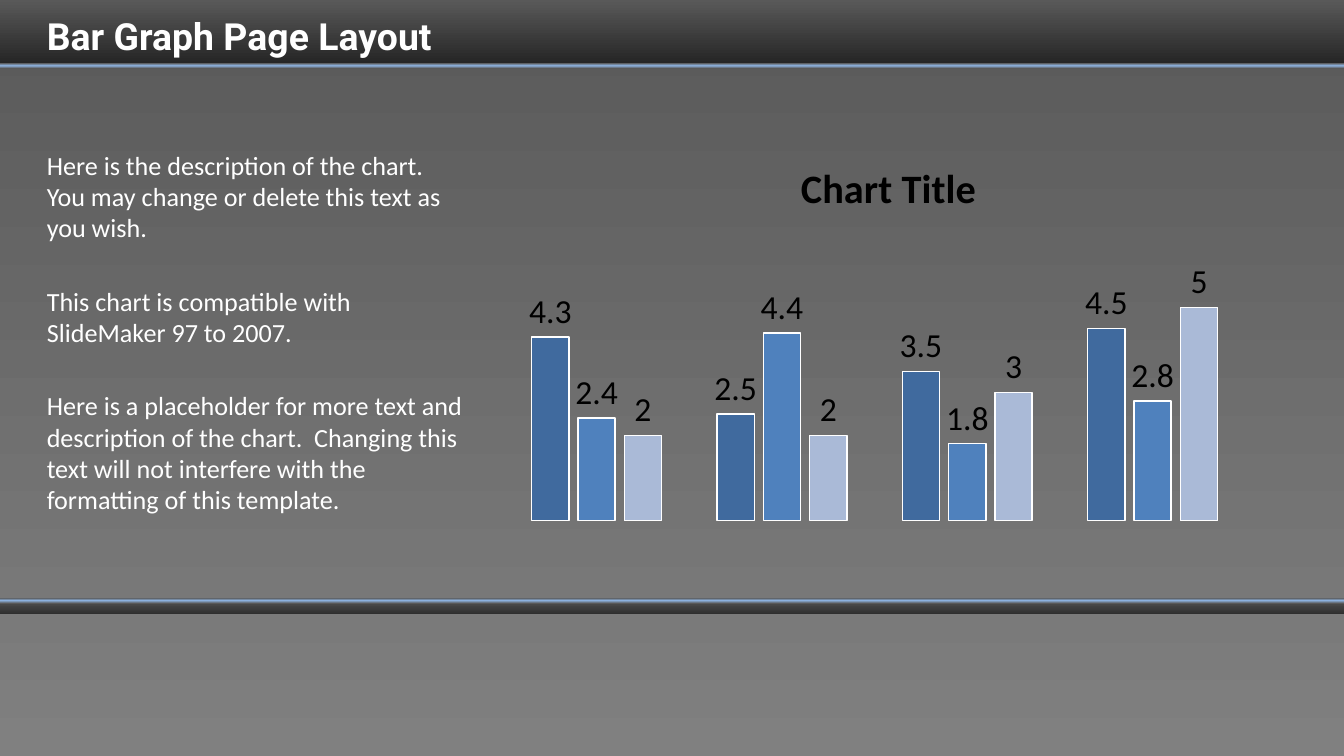
from dataclasses import dataclass

import pptx
import pptx.chart.data
import pptx.dml.color
import pptx.enum.chart
import pptx.enum.text
import pptx.oxml
import pptx.oxml.ns
import pptx.util
from pptx.enum.shapes import MSO_SHAPE

# The slide is a grid of 100 columns by 56.25 rows of square cells
CELL = 0.1
COLUMNS, ROWS = 100, 56.25

COLORS = {
    "dark": "262626",
    "charcoal": "2E2E2E",
    "gray": "595959",
    "light gray": "808080",
    "glow": "8EB4E3",
    "white": "FFFFFF",
    "black": "000000",
    "deep blue": "406A9E",
    "blue": "4F81BD",
    "pale blue": "AABAD7",
}
GLOW_STOPS = ((3, "gray"), (49, "glow"), (100, "gray"))


@dataclass(frozen=True)
class Area:
    column: float
    row: float
    columns: float
    rows: float

    def lengths(self) -> list:
        cells = (self.column, self.row, self.columns, self.rows)
        return [cell_length(count) for count in cells]


@dataclass(frozen=True)
class Band:
    area: Area
    stops: tuple


@dataclass(frozen=True)
class Series:
    name: str
    values: tuple
    color: str


@dataclass(frozen=True)
class TextStyle:
    font: str
    size: float
    bold: bool = False
    gap: float = 0
    anchor: object = pptx.enum.text.MSO_ANCHOR.TOP


BANDS = (
    Band(Area(0, 44.5, COLUMNS, 1.2), ((0, "gray"), (100, "charcoal"))),
    Band(Area(0, 0, COLUMNS, 4.7), ((0, "gray"), (100, "dark"))),
    Band(Area(-1.9, 4.7, 102.5, 0.4), GLOW_STOPS),
    Band(Area(-1.2, 44.5, 102.5, 0.4), GLOW_STOPS),
)
SERIES = (
    Series("Series 1", (4.3, 2.5, 3.5, 4.5), "deep blue"),
    Series("Series 2", (2.4, 4.4, 1.8, 2.8), "blue"),
    Series("Series 3", (2, 2, 3, 5), "pale blue"),
)
DESCRIPTION = (
    "Here is the description of the chart.  You may change or delete this text as you wish.",
    "This chart is compatible with SlideMaker 97 to 2007.",
    "Here is a placeholder for more text and description of the chart.  "
    "Changing this text will not interfere with the formatting of this template.",
)


def cell_length(count: float) -> pptx.util.Length:
    return pptx.util.Inches(count * CELL)


def color(name: str) -> pptx.dml.color.RGBColor:
    return pptx.dml.color.RGBColor.from_string(COLORS[name])


def paint_gradient(fill, owner, stops: tuple) -> None:
    """Fill from top to bottom with (percent, color name) stops."""
    fill.gradient()
    fill.gradient_angle = 270
    stop_list = owner.find(".//" + pptx.oxml.ns.qn("a:gsLst"))
    for stop in list(stop_list):
        stop_list.remove(stop)
    for percent, name in stops:
        stop_list.append(pptx.oxml.parse_xml(
            f'<a:gs {pptx.oxml.ns.nsdecls("a")} pos="{percent * 1000}">'
            f'<a:srgbClr val="{COLORS[name]}"/></a:gs>'))


def draw_band(page, band: Band) -> None:
    shape = page.shapes.add_shape(MSO_SHAPE.RECTANGLE, *band.area.lengths())
    shape.shadow.inherit = False
    shape.line.fill.background()
    paint_gradient(shape.fill, shape._element, band.stops)


def draw_text(page, area: Area, texts: tuple, style: TextStyle) -> None:
    frame = page.shapes.add_textbox(*area.lengths()).text_frame
    frame.word_wrap = True
    frame.vertical_anchor = style.anchor
    for index, text in enumerate(texts):
        para = frame.add_paragraph() if index else frame.paragraphs[0]
        para.text = text
        if index:
            para.space_before = pptx.util.Pt(style.gap)
        para.font.name = style.font
        para.font.size = pptx.util.Pt(style.size)
        para.font.bold = style.bold
        para.font.color.rgb = color("white")


def place_part(part, position: int, target: str = "", **shares: float) -> None:
    """Lay out a chart part by shares of the chart: x, y and perhaps w, h."""
    for layout in part.findall(pptx.oxml.ns.qn("c:layout")):
        part.remove(layout)
    target_tag = f'<c:layoutTarget val="{target}"/>' if target else ""
    share_tags = "".join(f'<c:{tag} val="{share}"/>' for tag, share in shares.items())
    part.insert(position, pptx.oxml.parse_xml(
        f'<c:layout {pptx.oxml.ns.nsdecls("c")}><c:manualLayout>{target_tag}'
        '<c:xMode val="edge"/><c:yMode val="edge"/>'
        f'{share_tags}</c:manualLayout></c:layout>'))


def draw_chart(page, area: Area) -> None:
    data = pptx.chart.data.CategoryChartData()
    data.categories = ["1", "2", "3", "4"]
    for series in SERIES:
        data.add_series(series.name, series.values)
    chart = page.shapes.add_chart(
        pptx.enum.chart.XL_CHART_TYPE.COLUMN_CLUSTERED, *area.lengths(), data).chart
    chart.has_legend = False
    chart.font.name = "Calibri"
    chart.font.size = pptx.util.Pt(18)
    chart.font.color.rgb = color("black")

    # Title
    para = chart.chart_title.text_frame.paragraphs[0]
    para.text = "Chart Title"
    para.font.name = "Calibri"
    para.font.size = pptx.util.Pt(21.6)
    para.font.bold = True
    para.font.color.rgb = color("black")
    chart.chart_title.include_in_layout = False
    place_part(chart.chart_title._element, 1, x=0.38, y=0.05)

    # Hidden axes
    chart.value_axis.minimum_scale = 0
    chart.value_axis.maximum_scale = 6
    chart.value_axis.has_major_gridlines = False
    for axis in (chart.category_axis, chart.value_axis):
        axis.visible = False

    # Columns and their labels
    plot = chart.plots[0]
    plot.vary_by_categories = False
    plot.gap_width = 150
    plot.overlap = -25
    for series, drawn in zip(SERIES, plot.series):
        drawn.format.fill.solid()
        drawn.format.fill.fore_color.rgb = color(series.color)
        drawn.format.line.color.rgb = color("white")
        drawn.format.line.width = pptx.util.Pt(0.75)
        labels = drawn.data_labels
        labels.show_value = True
        labels.position = pptx.enum.chart.XL_LABEL_POSITION.OUTSIDE_END
    place_part(chart._chartSpace.chart.plotArea, 0, "inner", x=0, y=0.33, w=0.973, h=0.635)


def main() -> None:
    deck = pptx.Presentation()
    deck.slide_width = cell_length(COLUMNS)
    deck.slide_height = cell_length(ROWS)
    page = deck.slides.add_slide(deck.slide_layouts[6])

    # Background and bands
    paint_gradient(page.background.fill, page._element,
                   ((0, "gray"), (100, "light gray")))
    for band in BANDS:
        draw_band(page, band)

    # Heading, chart and description
    draw_text(page, Area(2.5, -0.2, 45.8, 5), ("Bar Graph Page Layout",),
              TextStyle("Roboto", 20, bold=True, anchor=pptx.enum.text.MSO_ANCHOR.BOTTOM))
    draw_chart(page, Area(37.5, 9.8, 56.7, 30))
    draw_text(page, Area(2.5, 10.6, 33.3, 33.1), DESCRIPTION,
              TextStyle("Calibri", 14, gap=22.4))
    deck.save("out.pptx")


if __name__ == "__main__":
    main()
